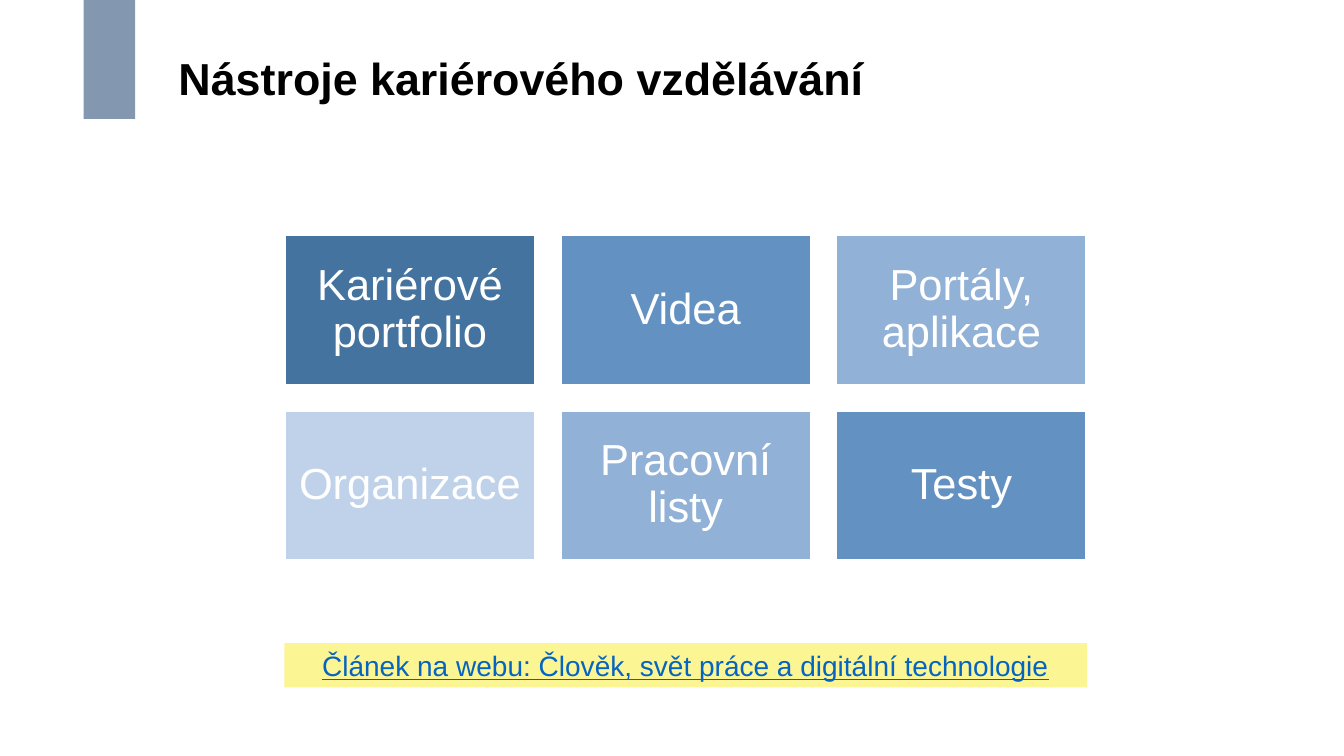
from pptx import Presentation
from pptx.dml.color import RGBColor
from pptx.enum.shapes import MSO_SHAPE
from pptx.enum.text import MSO_ANCHOR, MSO_AUTO_SIZE, PP_ALIGN
from pptx.util import Inches, Pt

RECTANGLE = MSO_SHAPE.RECTANGLE
MIDDLE, BOTTOM = MSO_ANCHOR.MIDDLE, MSO_ANCHOR.BOTTOM
LEFT, CENTER = PP_ALIGN.LEFT, PP_ALIGN.CENTER
NO_AUTOSIZE = MSO_AUTO_SIZE.NONE

FONT = "Arial"
COLORS = {
    "black": "000000",
    "white": "FFFFFF",
    "accent": "8397B0",
    "dark": "43739E",
    "medium": "6391C1",
    "light": "91B1D6",
    "pale": "C0D2EA",
    "yellow": "FCF593",
    "link": "0563C1",
}
TOOLS = [
    ("Kariérové portfolio", "dark"),
    ("Videa", "medium"),
    ("Portály, aplikace", "light"),
    ("Organizace", "pale"),
    ("Pracovní listy", "light"),
    ("Testy", "medium"),
]
COLUMNS = 3
GRID_LEFT, GRID_TOP = 2.82, 2.33
TILE_WIDTH, TILE_HEIGHT = 2.49, 1.49
STEP_X, STEP_Y = 2.735, 1.74


def color(name):
    return RGBColor.from_string(COLORS[name])


def write_text(shape, text, size, color_name, align=CENTER, anchor=MIDDLE):
    frame = shape.text_frame
    frame.word_wrap = True
    frame.auto_size = NO_AUTOSIZE
    frame.vertical_anchor = anchor
    frame.text = text
    para = frame.paragraphs[0]
    para.alignment = align
    para.font.name = FONT
    para.font.size = Pt(size)
    para.font.color.rgb = color(color_name)
    return para


def add_box(page, left, top, width, height, fill):
    box = page.shapes.add_shape(
        RECTANGLE, Inches(left), Inches(top), Inches(width), Inches(height)
    )
    box.shadow.inherit = False
    box.fill.solid()
    box.fill.fore_color.rgb = color(fill)
    box.line.fill.background()
    return box


def place_title(page, text):
    title = page.shapes.title
    title.left, title.top = Inches(1.67), Inches(0.49)
    title.width, title.height = Inches(10.98), Inches(0.58)
    para = write_text(title, text, 32, "black", LEFT, BOTTOM)
    para.font.bold = True
    para.line_spacing = 0.7


def add_tile(page, index, text, fill):
    row, column = divmod(index, COLUMNS)
    tile = add_box(
        page,
        GRID_LEFT + column * STEP_X,
        GRID_TOP + row * STEP_Y,
        TILE_WIDTH,
        TILE_HEIGHT,
        fill,
    )
    tile.line.color.rgb = color("white")
    tile.line.width = Pt(2)
    frame = tile.text_frame
    frame.margin_left = frame.margin_right = Inches(0.13)
    frame.margin_top = frame.margin_bottom = Inches(0.13)
    write_text(tile, text, 31, "white").line_spacing = 0.9


def add_article_bar(page, text):
    bar = add_box(page, 2.82, 6.38, 7.96, 0.44, "yellow")
    write_text(bar, text, 20, "link").font.underline = True


def main():
    deck = Presentation()
    deck.slide_width, deck.slide_height = Inches(13.33), Inches(7.5)
    page = deck.slides.add_slide(deck.slide_layouts.get_by_name("Title Only"))
    add_box(page, 0.83, 0, 0.51, 1.18, "accent")
    place_title(page, "Nástroje kariérového vzdělávání")
    for index, (text, fill) in enumerate(TOOLS):
        add_tile(page, index, text, fill)
    add_article_bar(page, "Článek na webu: Člověk, svět práce a digitální technologie")
    deck.save("out.pptx")


if __name__ == "__main__":
    main()
